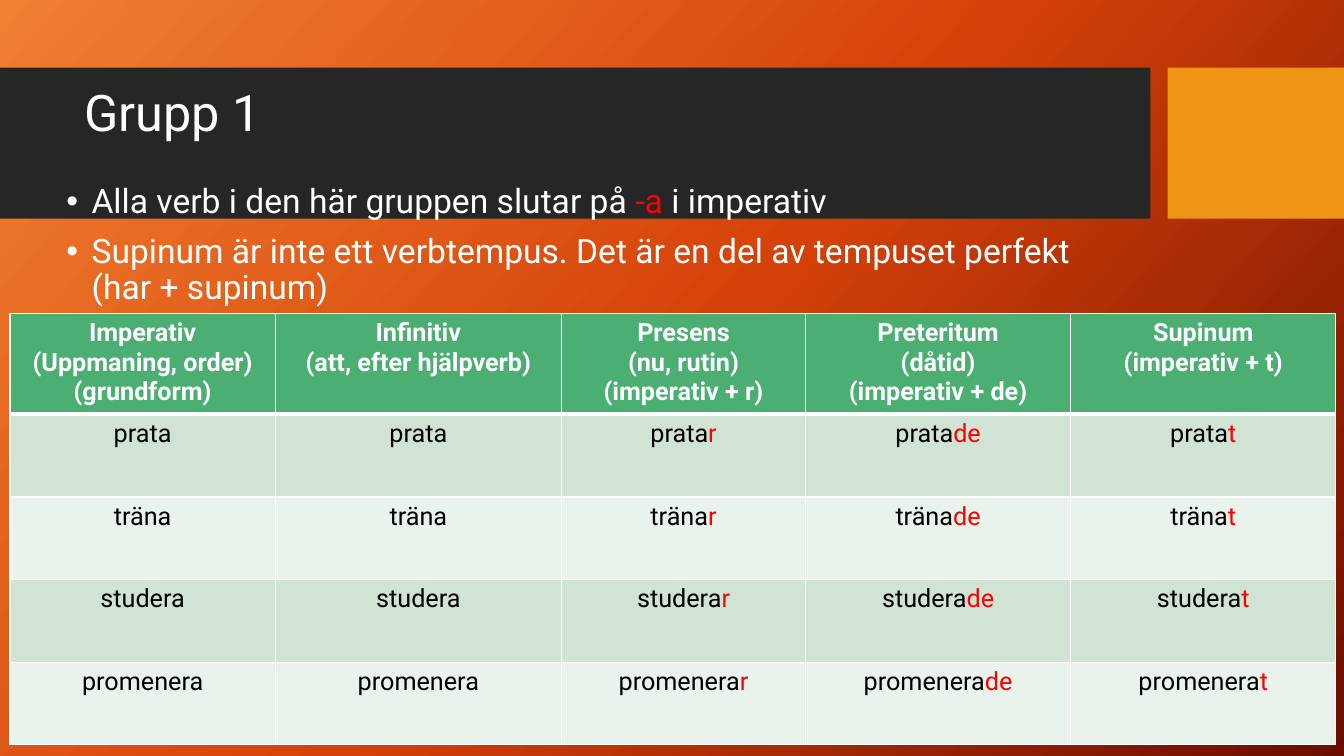
from lxml.etree import SubElement
from pptx import Presentation
from pptx.dml.color import RGBColor
from pptx.enum.shapes import MSO_SHAPE
from pptx.enum.text import MSO_ANCHOR, PP_ALIGN
from pptx.oxml.ns import qn
from pptx.util import Inches, Pt

WHITE = RGBColor(0xFF, 0xFF, 0xFF)
BLACK = RGBColor(0x00, 0x00, 0x00)
RED = RGBColor(0xFF, 0x00, 0x00)
CHARCOAL = RGBColor(0x26, 0x26, 0x26)
AMBER = RGBColor(0xF0, 0x94, 0x15)
GREEN = RGBColor(0x4B, 0xAF, 0x73)
GREEN_TINT = RGBColor(0xD0, 0xE3, 0xD5)
GREEN_PALE = RGBColor(0xE9, 0xF2, 0xEB)
BACKDROP = [(0, RGBColor(0xF1, 0x80, 0x31)),
            (50, RGBColor(0xD5, 0x42, 0x09)),
            (100, RGBColor(0x6A, 0x0D, 0x00))]

RULES = [
    [("Alla verb i den här gruppen slutar på ", WHITE), ("-a ", RED), ("i imperativ", WHITE)],
    [("Supinum är inte ett verbtempus. Det är en del av tempuset perfekt (har + supinum)", WHITE)],
]
HEADINGS = [
    ["Imperativ", "(Uppmaning, order)", "(grundform)"],
    ["Infinitiv", "(att, efter hjälpverb)"],
    ["Presens", "(nu, rutin)", "(imperativ + r)"],
    ["Preteritum", "(dåtid)", "(imperativ + de)"],
    ["Supinum", "(imperativ + t)"],
]
ENDINGS = ["", "", "r", "de", "t"]
VERBS = ["prata", "träna", "studera", "promenera"]
COLUMN_WIDTHS = [2.63, 2.84, 2.42, 2.63, 2.63]
HEADER_HEIGHT, VERB_HEIGHT = 0.98, 0.82


def add_solid_fill(parent, color):
    SubElement(SubElement(parent, qn("a:solidFill")), qn("a:srgbClr"), val=str(color))


class GrammarSlide:
    font_name = "Roboto"

    def __init__(self, slide):
        self.slide = slide

    def backdrop(self, stops, angle):
        """Fill the background with a gradient running clockwise by angle."""
        fill = self.slide.background.fill
        fill.gradient()
        fill.gradient_angle = 360 - angle
        stop_list = next(self.slide.element.iter(qn("a:gsLst")))
        stop_list.clear()
        for percent, color in stops:
            stop = SubElement(stop_list, qn("a:gs"), pos=str(percent * 1000))
            SubElement(stop, qn("a:srgbClr"), val=str(color))

    def block(self, left, top, width, height, color):
        block = self.slide.shapes.add_shape(
            MSO_SHAPE.RECTANGLE, Inches(left), Inches(top), Inches(width), Inches(height))
        block.shadow.inherit = False
        block.fill.solid()
        block.fill.fore_color.rgb = color
        block.line.fill.background()

    def add_pieces(self, paragraph, pieces, size, bold=False):
        """Add (text, colour) pieces to a paragraph as runs."""
        paragraph.font.name = self.font_name
        paragraph.font.size = Pt(size)
        paragraph.font.bold = bold
        for text, color in pieces:
            run = paragraph.add_run()
            run.text = text
            run.font.color.rgb = color

    def text(self, left, top, width, height, paragraphs, size, bulleted=False):
        frame = self.slide.shapes.add_textbox(
            Inches(left), Inches(top), Inches(width), Inches(height)).text_frame
        frame.word_wrap = True
        frame.vertical_anchor = MSO_ANCHOR.TOP
        for index, pieces in enumerate(paragraphs):
            paragraph = frame.add_paragraph() if index else frame.paragraphs[0]
            paragraph.line_spacing = 0.9
            if index:
                paragraph.space_before = Pt(10)
            if bulleted:
                properties = paragraph._p.get_or_add_pPr()
                properties.set("marL", str(Inches(0.25)))
                properties.set("indent", str(-Inches(0.25)))
                SubElement(properties, qn("a:buFont"), typeface="Arial")
                SubElement(properties, qn("a:buChar"), char="•")
            self.add_pieces(paragraph, pieces, size)

    def cell(self, cell, lines, fill, bold=False, top=1, bottom=1):
        """Style a cell; top and bottom are border widths in points."""
        properties = cell._tc.get_or_add_tcPr()
        for side, width in (("L", 1), ("R", 1), ("T", top), ("B", bottom)):
            border = SubElement(properties, qn(f"a:ln{side}"), w=str(Pt(width)))
            add_solid_fill(border, WHITE)
        cell.fill.solid()
        cell.fill.fore_color.rgb = fill
        frame = cell.text_frame
        for index, pieces in enumerate(lines):
            paragraph = frame.add_paragraph() if index else frame.paragraphs[0]
            paragraph.alignment = PP_ALIGN.CENTER
            self.add_pieces(paragraph, pieces, 18, bold)

    def verb_table(self, left, top):
        height = HEADER_HEIGHT + VERB_HEIGHT * len(VERBS)
        table = self.slide.shapes.add_table(
            len(VERBS) + 1, len(HEADINGS), Inches(left), Inches(top),
            Inches(sum(COLUMN_WIDTHS)), Inches(height)).table
        for column, width in zip(table.columns, COLUMN_WIDTHS):
            column.width = Inches(width)
        for index, row in enumerate(table.rows):
            row.height = Inches(VERB_HEIGHT if index else HEADER_HEIGHT)
        for column, (heading, ending) in enumerate(zip(HEADINGS, ENDINGS)):
            self.cell(table.cell(0, column), [[(line, WHITE)] for line in heading],
                      GREEN, bold=True, bottom=3)
            for row, verb in enumerate(VERBS, 1):
                pieces = [(verb, BLACK)] + ([(ending, RED)] if ending else [])
                self.cell(table.cell(row, column), [pieces],
                          GREEN_TINT if row % 2 else GREEN_PALE,
                          top=3 if row == 1 else 1)


def main():
    deck = Presentation()
    deck.slide_width, deck.slide_height = Inches(13.33), Inches(7.5)
    page = GrammarSlide(deck.slides.add_slide(deck.slide_layouts[6]))
    page.backdrop(BACKDROP, 42)
    page.block(0, 0.67, 11.41, 1.5, CHARCOAL)
    page.block(11.58, 0.67, 1.75, 1.5, AMBER)
    page.text(0.74, 0.82, 10.51, 1.18, [[("Grupp 1", WHITE)]], 36)
    page.text(0.56, 1.78, 10.51, 3.94, RULES, 24, bulleted=True)
    page.verb_table(0.1, 3.11)
    deck.save("out.pptx")


if __name__ == "__main__":
    main()
